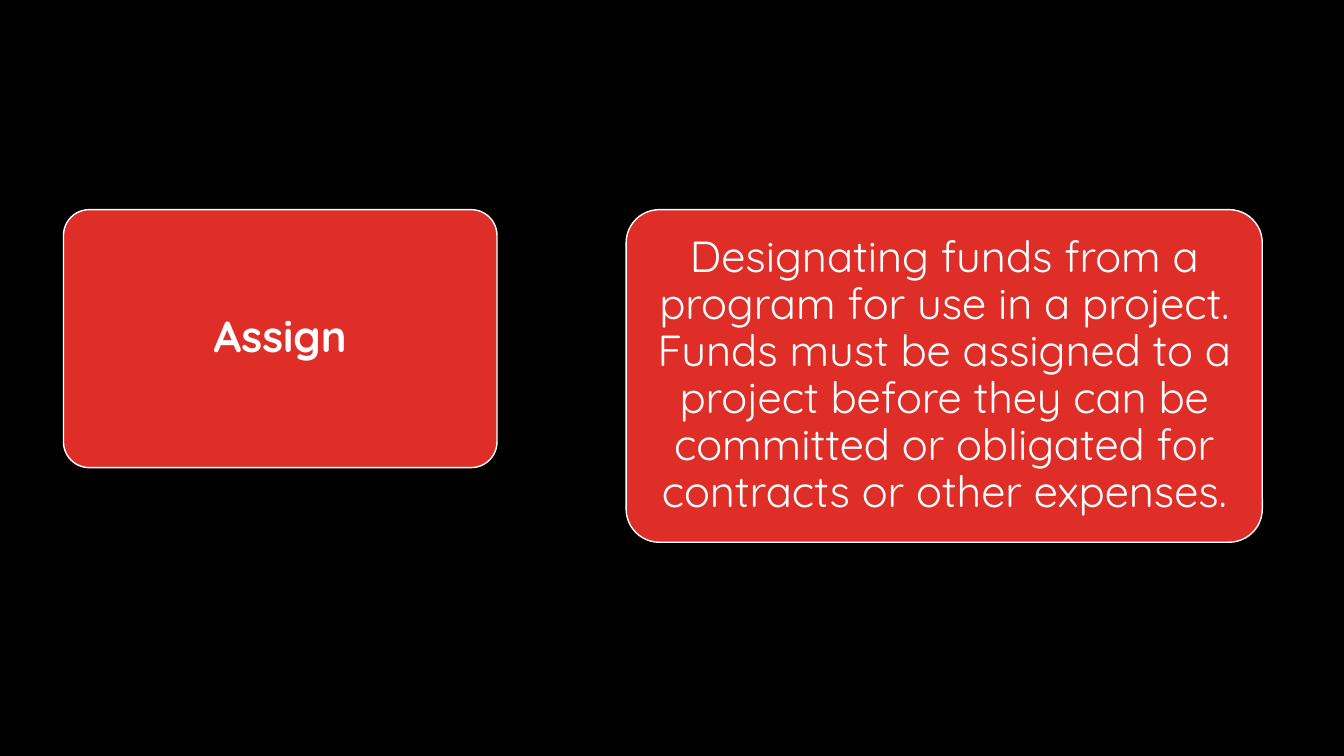
from pptx import Presentation
from pptx.dml.color import RGBColor
from pptx.enum.shapes import MSO_SHAPE
from pptx.enum.text import MSO_ANCHOR, PP_ALIGN
from pptx.util import Inches, Pt

BLACK = RGBColor(0x00, 0x00, 0x00)
RED = RGBColor(0xDF, 0x2E, 0x28)
WHITE = RGBColor(0xFF, 0xFF, 0xFF)

CARD_TOP = 2.08
TERM = "Assign"
DEFINITION = (
    "Designating funds from a program for use in a project. "
    "Funds must be assigned to a project before they can be "
    "committed or obligated for contracts or other expenses."
)


def add_card(page, left, width, height, text, bold=False):
    """Add a red rounded card with centred white text."""
    card = page.shapes.add_shape(
        MSO_SHAPE.ROUNDED_RECTANGLE,
        Inches(left), Inches(CARD_TOP), Inches(width), Inches(height),
    )
    card.adjustments[0] = 0.1
    card.shadow.inherit = False
    card.fill.solid()
    card.fill.fore_color.rgb = RED
    card.line.color.rgb = WHITE
    card.line.width = Pt(1)

    frame = card.text_frame
    frame.word_wrap = True
    frame.vertical_anchor = MSO_ANCHOR.MIDDLE
    frame.margin_left = frame.margin_right = Inches(0.06)
    frame.margin_top = frame.margin_bottom = Inches(0.04)

    para = frame.paragraphs[0]
    para.text = text
    para.alignment = PP_ALIGN.CENTER
    para.line_spacing = 0.9
    para.font.name = "Quicksand"
    para.font.size = Pt(31)
    para.font.bold = bold
    para.font.color.rgb = WHITE


def main():
    """Build the slide that defines the term and save the deck."""
    deck = Presentation()
    deck.slide_width = Inches(13.33)
    deck.slide_height = Inches(7.5)
    page = deck.slides.add_slide(deck.slide_layouts[6])
    page.background.fill.solid()
    page.background.fill.fore_color.rgb = BLACK

    add_card(page, 0.63, 4.3, 2.56, TERM, bold=True)
    add_card(page, 6.21, 6.31, 3.3, DEFINITION)

    deck.save("out.pptx")


if __name__ == "__main__":
    main()
